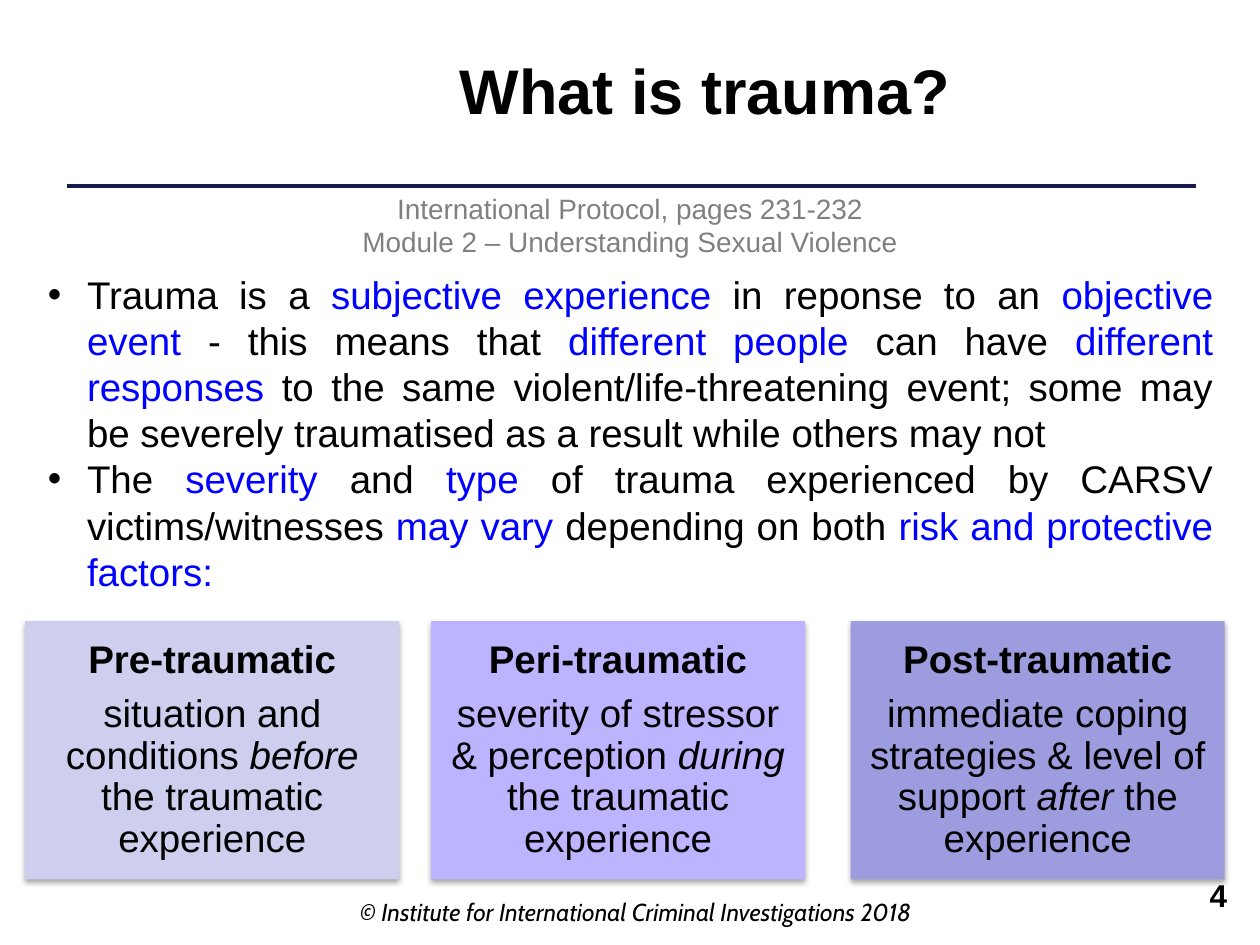
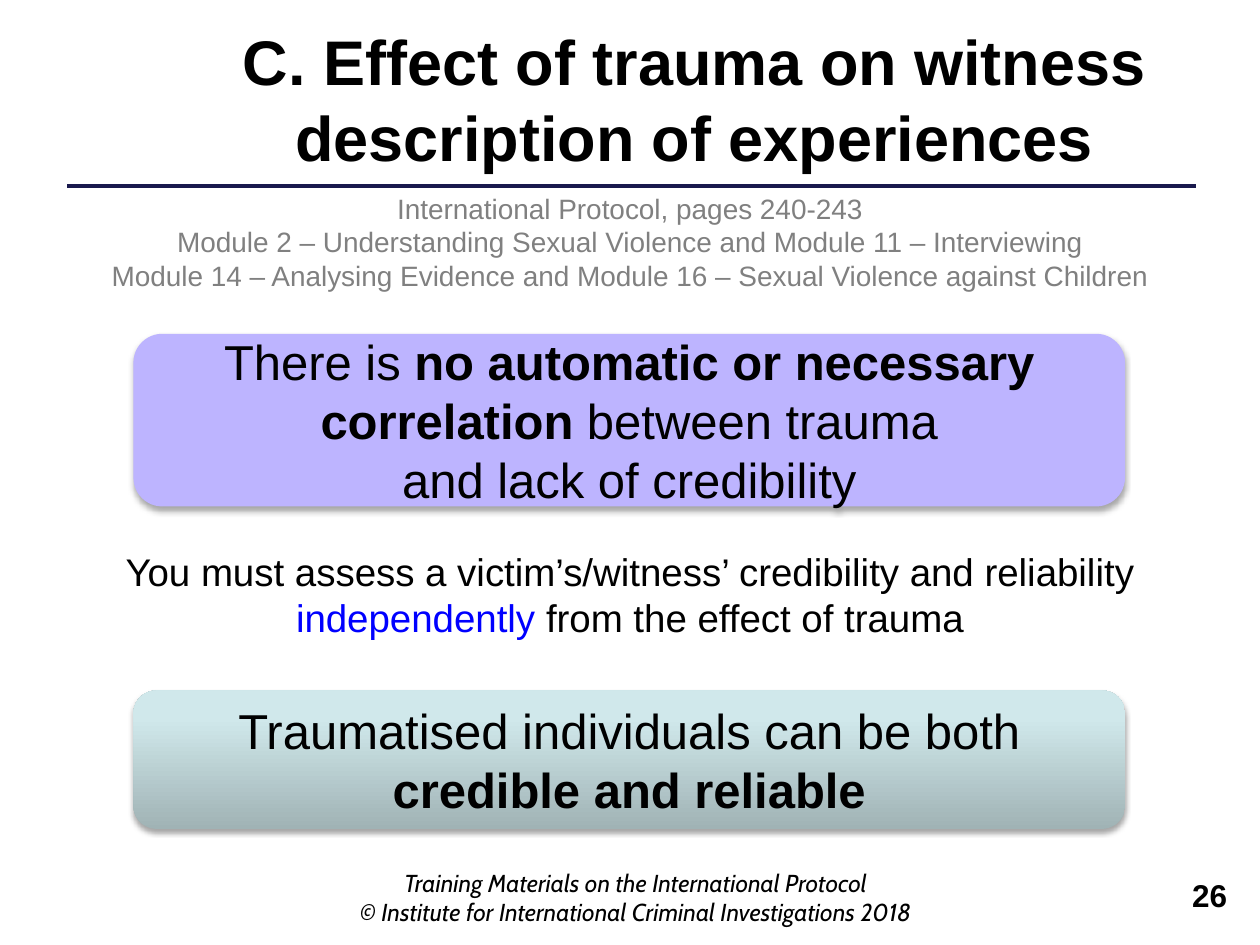
from copy import deepcopy

from lxml.etree import SubElement
from pptx import Presentation
from pptx.dml.color import RGBColor
from pptx.enum.shapes import MSO_CONNECTOR, MSO_SHAPE as Preset
from pptx.enum.text import MSO_ANCHOR as Anchor, MSO_AUTO_SIZE as AutoSize, PP_ALIGN as Align
from pptx.oxml.ns import qn
from pptx.util import Cm, Pt

BLACK = RGBColor(0x00, 0x00, 0x00)
BLUE = RGBColor(0x00, 0x00, 0xFF)
GRAY = RGBColor(0x80, 0x80, 0x80)
NAVY = RGBColor(0x19, 0x19, 0x4D)
PALE_LILAC = RGBColor(0xCE, 0xCE, 0xEF)
LILAC = RGBColor(0xBD, 0xB4, 0xFF)
VIOLET = RGBColor(0x9C, 0x9C, 0xDF)
TEAL_STOPS = [
    (0, RGBColor(0xA0, 0xB3, 0xB5)),
    (0.8, RGBColor(0xD0, 0xE8, 0xEB)),
    (1, RGBColor(0xD1, 0xEA, 0xEC)),
]

COPYRIGHT = "© Institute for International Criminal Investigations 2018"

TRAUMA = {
    "title": "What is trauma?",
    "title_area": (3.71, 0.91, 21, 1.8),
    "number": "4",
    "footer": [COPYRIGHT],
    "references": [
        "International Protocol, pages 231-232",
        "Module 2 – Understanding Sexual Violence",
    ],
}
BULLETS = [
    [
        "Trauma is a ", ("subjective experience ", "blue"), "in reponse to an ",
        ("objective event ", "blue"), "- this means that ", ("different people ", "blue"),
        "can have ", ("different responses ", "blue"),
        "to the same violent/life-threatening event; some may be severely "
        "traumatised as a result while others may not",
    ],
    [
        "The ", ("severity", "blue"), " and ", ("type", "blue"),
        " of trauma experienced by CARSV victims/witnesses ", ("may vary ", "blue"),
        "depending on both ", ("risk and protective factors:", "blue"),
    ],
]
FACTORS = [
    (0.51, PALE_LILAC, "Pre-traumatic",
     ["situation and conditions", (" before ", "italic"), "the traumatic experience"]),
    (8.69, LILAC, "Peri-traumatic",
     ["severity of stressor & perception ", ("during", "italic"), " the traumatic experience"]),
    (17.15, VIOLET, "Post-traumatic",
     ["immediate coping strategies & level of support ", ("after", "italic"), " the experience"]),
]

EFFECT = {
    "title": "C. Effect of trauma on witness description of experiences",
    "title_area": (3.5, 0.33, 21, 3.33),
    "number": "26",
    "footer": ["Training Materials on the International Protocol", COPYRIGHT],
    "references": [
        "International Protocol, pages 240-243",
        "Module 2 – Understanding Sexual Violence and Module 11 – Interviewing",
        "Module 14 – Analysing Evidence and Module 16 – Sexual Violence against Children",
    ],
}
CREDIBILITY = [
    ["There is ", ("no automatic or necessary correlation ", "bold"), "between trauma"],
    "and lack of credibility",
]
ADVICE = [[
    "You must assess a victim’s/witness’ credibility and reliability ",
    ("independently ", "blue"), "from the effect of trauma",
]]
RELIABILITY = ["Traumatised individuals can be both", [("credible and reliable", "bold")]]

FOOTER_AREA = (6.91, 17.35, 11.81, 1.45)
NUMBER_AREA = (18.49, 17.53, 6.5, 1.32)
REFERENCE_AREA = (0.3, 3.73, 24.8, 2.3)
BULLET_AREA = (0.71, 5.33, 24, 6.83)
ADVICE_AREA = (0, 10.92, 25.4, 3.07)
CARD_TOP, CARD_WIDTH, CARD_HEIGHT = 12.52, 7.54, 5.21
CALLOUT_LEFT, CALLOUT_WIDTH = 2.69, 19.99


def lengths(area):
    """Turn an area in centimetres into lengths."""
    return [Cm(value) for value in area]


def place(shape, area):
    """Move and size a placeholder."""
    shape.left, shape.top, shape.width, shape.height = lengths(area)


def write(shape, paragraphs, size, color=BLACK, align=Align.CENTER, anchor=Anchor.TOP,
          name="Arial", bold=False, italic=False):
    """Fill a shape with paragraphs of plain or styled spans."""
    frame = shape.text_frame
    frame.word_wrap = True
    frame.auto_size = AutoSize.NONE
    frame.vertical_anchor = anchor
    for index, spans in enumerate(paragraphs):
        para = frame.add_paragraph() if index else frame.paragraphs[0]
        para.alignment = align
        para.space_before = Pt(0)
        font = para.font
        font.name, font.size, font.bold, font.italic = name, Pt(size), bold, italic
        font.color.rgb = color
        for item in [spans] if isinstance(spans, str) else spans:
            text, style = (item, None) if isinstance(item, str) else item
            span = para.add_run()
            span.text = text
            if style == "blue":
                span.font.color.rgb = BLUE
            elif style == "bold":
                span.font.bold = True
            elif style == "italic":
                span.font.italic = True
    return frame


def add_text(page, area, paragraphs, size, **options):
    """Add a text box."""
    return write(page.shapes.add_textbox(*lengths(area)), paragraphs, size, **options)


def add_panel(page, preset, area, fill):
    """Add a borderless shape with a soft shadow and a solid or gradient fill."""
    panel = page.shapes.add_shape(preset, *lengths(area))
    properties = panel.element.spPr
    if isinstance(fill, RGBColor):
        panel.fill.solid()
        panel.fill.fore_color.rgb = fill
    else:
        panel.fill.gradient()
        panel.fill.gradient_angle = 90
        stop_list = properties.find(".//" + qn("a:gsLst"))
        while len(stop_list) < len(fill):
            stop_list.append(deepcopy(stop_list[0]))
        for stop, (position, color) in zip(panel.fill.gradient_stops, fill):
            stop.position = position
            stop.color.rgb = color
    panel.line.fill.background()
    panel.shadow.inherit = False
    shadow = SubElement(properties.find(qn("a:effectLst")), qn("a:outerShdw"),
                        blurRad=str(Pt(3.1)), dist=str(Pt(1.8)), dir="5400000", rotWithShape="0")
    shade = SubElement(shadow, qn("a:srgbClr"), val=str(BLACK))
    SubElement(shade, qn("a:alpha"), val="35000")
    return panel


def add_page(deck, layout, content):
    """Add a slide with its title, rule, references, footer and number."""
    page = deck.slides.add_slide(deck.slide_layouts[layout])
    place(page.shapes.title, content["title_area"])
    write(page.shapes.title, [content["title"]], 36, bold=True)
    rule = page.shapes.add_connector(MSO_CONNECTOR.STRAIGHT, *lengths((24.1, 3.75, 1.35, 3.75)))
    rule.line.color.rgb = NAVY
    rule.line.width = Pt(2.5)
    SubElement(rule.element.spPr, qn("a:effectLst"))
    add_text(page, FOOTER_AREA, content["footer"], 14, name="Cabin", italic=True,
             anchor=Anchor.BOTTOM)
    add_text(page, NUMBER_AREA, [content["number"]], 18, bold=True, align=Align.RIGHT)
    add_text(page, REFERENCE_AREA, content["references"], 16, color=GRAY)
    return page


def build_trauma(deck):
    """Build the definition slide with its three factor cards."""
    page = add_page(deck, 1, TRAUMA)
    body = page.placeholders[1]
    place(body, BULLET_AREA)
    for para in write(body, BULLETS, 22, align=Align.JUSTIFY).paragraphs:
        properties = para._p.get_or_add_pPr()
        properties.set("marL", str(Cm(0.79)))
        properties.set("indent", str(-Cm(0.79)))
    for left, color, heading, detail in FACTORS:
        card = add_panel(page, Preset.RECTANGLE, (left, CARD_TOP, CARD_WIDTH, CARD_HEIGHT), color)
        frame = write(card, [[(heading, "bold")], detail], 22, anchor=Anchor.MIDDLE)
        frame.margin_left = frame.margin_right = Cm(0.2)
        frame.margin_top = frame.margin_bottom = Cm(0.2)
        for para in frame.paragraphs:
            para.line_spacing = 0.9
            para.space_after = Pt(7.5)


def build_effect(deck):
    """Build the credibility slide with its two callouts."""
    page = add_page(deck, 5, EFFECT)
    add_text(page, ADVICE_AREA, ADVICE, 22)
    for top, height, fill, message in [
        (6.73, 3.48, LILAC, CREDIBILITY),
        (13.92, 2.79, TEAL_STOPS, RELIABILITY),
    ]:
        callout = add_panel(page, Preset.FLOWCHART_ALTERNATE_PROCESS,
                            (CALLOUT_LEFT, top, CALLOUT_WIDTH, height), fill)
        write(callout, message, 28, anchor=Anchor.MIDDLE)


def main():
    """Build and save the deck."""
    deck = Presentation()
    deck.slide_width, deck.slide_height = Cm(25.4), Cm(19.05)
    build_trauma(deck)
    build_effect(deck)
    deck.save("out.pptx")


if __name__ == "__main__":
    main()
